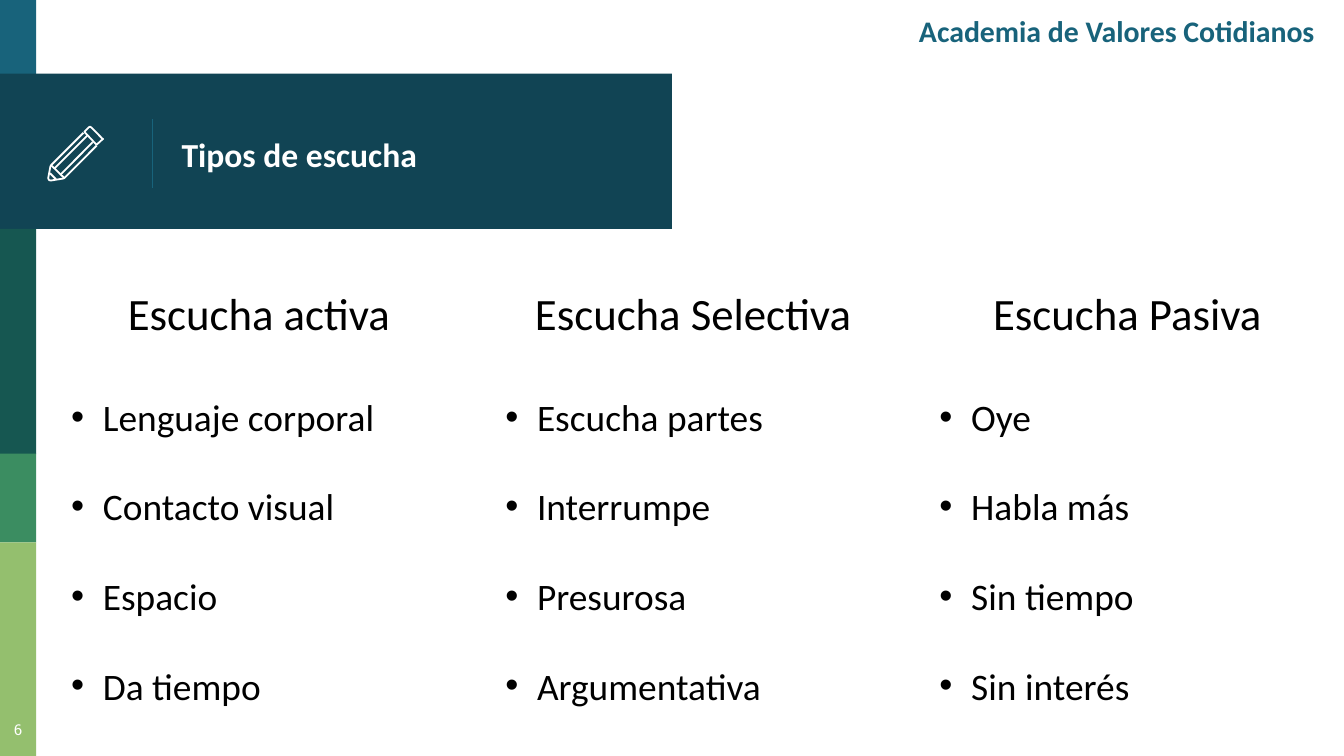
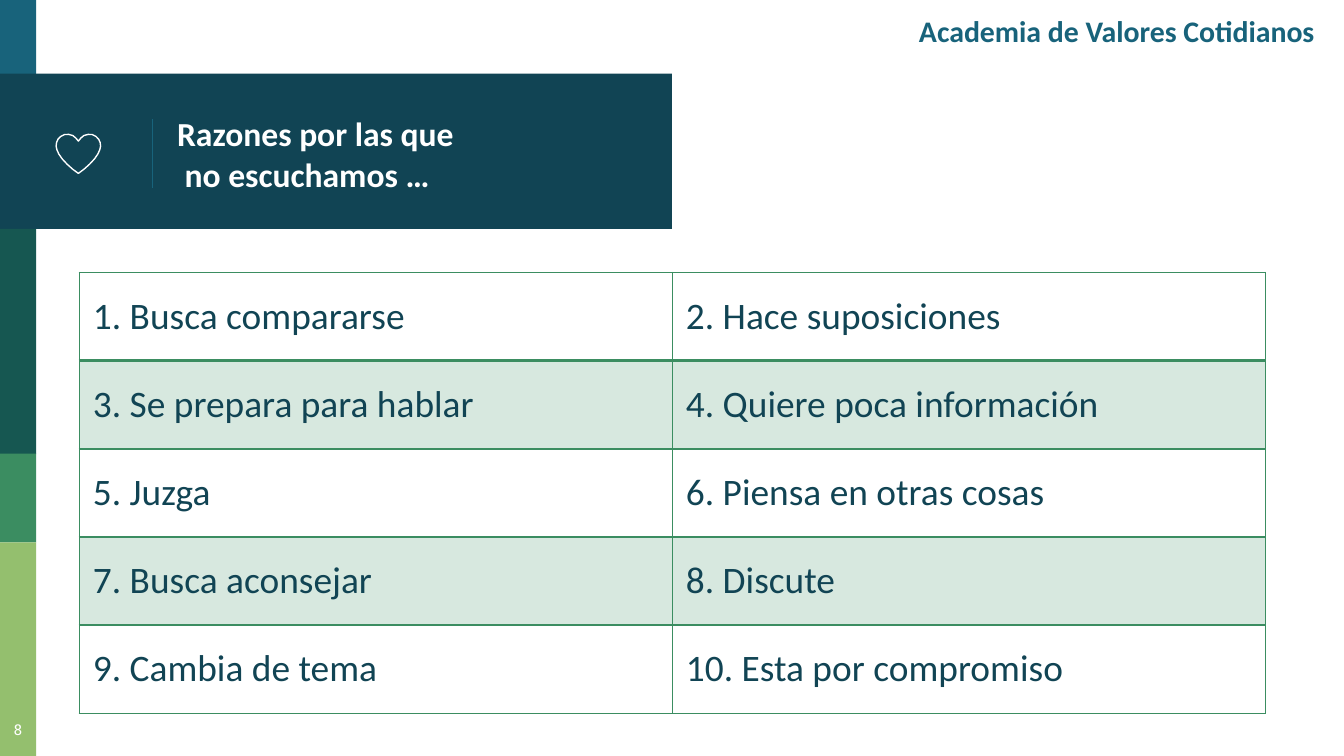
from dataclasses import dataclass

from lxml.etree import SubElement
from pptx import Presentation
from pptx.dml.color import RGBColor
from pptx.enum.shapes import MSO_CONNECTOR, MSO_SHAPE
from pptx.enum.text import MSO_ANCHOR, PP_ALIGN
from pptx.oxml.ns import qn
from pptx.util import Pt

Dot = tuple[float, float]


@dataclass(frozen=True)
class Theme:
    font: str = "Calibri"
    slab: str = "Roboto Slab"
    white: str = "FFFFFF"
    black: str = "000000"
    blue: str = "18637B"
    navy: str = "114454"
    pine: str = "165751"
    green: str = "3B8D61"
    lime: str = "94BF6E"
    head: int = 24
    body: int = 20
    title: int = 18
    brand: int = 16
    page: int = 8


THEME = Theme()
WIDTH, HEIGHT = 720, 405
SIDE = 19.4
INSET = 7.2
BRAND = "Academia de Valores Cotidianos"


@dataclass(frozen=True)
class Box:
    left: float
    top: float
    width: float
    height: float


@dataclass(frozen=True)
class Style:
    size: int
    color: str
    bold: bool = False
    font: str = THEME.font


@dataclass(frozen=True)
class Band:
    box: Box
    color: str


@dataclass(frozen=True)
class Stroke:
    dots: list[Dot]
    closed: bool = False


@dataclass(frozen=True)
class Column:
    head: str
    items: list[str]


BANDS = [
    Band(Box(0, 0, SIDE, 41.8), THEME.blue),
    Band(Box(0, 39.4, 360, 83.2), THEME.navy),
    Band(Box(0, 122.6, SIDE, 120.8), THEME.pine),
    Band(Box(0, 243, SIDE, 47.6), THEME.green),
    Band(Box(0, 290.6, SIDE, 114.4), THEME.lime),
]

PENCIL = [
    Stroke([(54.7, 74.2), (49, 68.4), (48.2, 67.9), (47.4, 68.4), (45.2, 70.7),
            (51.7, 77.6), (54.7, 74.9), (55.2, 74.5)], closed=True),
    Stroke([(44.7, 71.2), (27.4, 88.5), (27, 89.2), (25.8, 95.6), (26.4, 96.6),
            (27.4, 96.7), (33.8, 95.7), (34.5, 95.4), (51.8, 78)]),
    Stroke([(49.7, 76.2), (32.3, 93.7)]),
    Stroke([(46.8, 72.7), (29.4, 90.1)]),
    Stroke([(30, 96), (26.8, 92.8)]),
    Stroke([(27.4, 88.5), (34.5, 95.4)]),
]

# Right half of the heart, as offsets from its axis, from notch to tip
HEART_AXIS = 42
HALF = [(0, 75.6), (1.4, 73.9), (3, 72.6), (5.2, 72), (7.4, 72.1), (9.4, 73.1),
        (10.9, 74.6), (11.7, 76.4), (11.9, 78.3), (11.5, 80.2), (10.4, 82.6),
        (8.6, 85.2), (6, 88), (3, 90.7), (0, 92.9)]
HEART = [Stroke([(HEART_AXIS + x, y) for x, y in HALF]
                + [(HEART_AXIS - x, y) for x, y in HALF[-2:0:-1]], closed=True)]

COLUMNS = [
    Column("Escucha activa",
           ["Lenguaje corporal", "Contacto visual", "Espacio", "Da tiempo"]),
    Column("Escucha Selectiva",
           ["Escucha partes", "Interrumpe", "Presurosa", "Argumentativa"]),
    Column("Escucha Pasiva",
           ["Oye", "Habla más", "Sin tiempo", "Sin interés"]),
]

REASONS = ["Busca compararse", "Hace suposiciones", "Se prepara para hablar",
           "Quiere poca información", "Juzga", "Piensa en otras cosas",
           "Busca aconsejar", "Discute", "Cambia de tema",
           "Esta por compromiso"]


def rgb(color: str) -> RGBColor:
    return RGBColor.from_string(color)


def place(box: Box) -> list[Pt]:
    return [Pt(n) for n in (box.left, box.top, box.width, box.height)]


def add_run(para, text: str, style: Style) -> None:
    run = para.add_run()
    run.text = text
    run.font.name = style.font
    run.font.size = Pt(style.size)
    run.font.bold = style.bold
    run.font.color.rgb = rgb(style.color)


def add_frame(slide, box: Box, anchor=MSO_ANCHOR.TOP, side: float = INSET):
    frame = slide.shapes.add_textbox(*place(box)).text_frame
    frame.word_wrap = True
    frame.vertical_anchor = anchor
    frame.margin_left = frame.margin_right = Pt(side)
    frame.margin_top = frame.margin_bottom = Pt(INSET)
    return frame


def add_label(slide, box: Box, lines: list[str], style: Style,
              align=PP_ALIGN.LEFT, anchor=MSO_ANCHOR.MIDDLE,
              side: float = INSET) -> None:
    """Put one paragraph on the slide, with a break between lines."""
    para = add_frame(slide, box, anchor, side).paragraphs[0]
    para.alignment = align
    for i, line in enumerate(lines):
        if i:
            para.add_line_break()
        add_run(para, line, style)


def add_band(slide, band: Band) -> None:
    shape = slide.shapes.add_shape(MSO_SHAPE.RECTANGLE, *place(band.box))
    shape.shadow.inherit = False
    shape.fill.solid()
    shape.fill.fore_color.rgb = rgb(band.color)
    shape.line.fill.background()


def add_rule(slide, x: float, top: float, end: float) -> None:
    rule = slide.shapes.add_connector(
        MSO_CONNECTOR.STRAIGHT, Pt(x), Pt(top), Pt(x), Pt(end))
    rule.line.color.rgb = rgb(THEME.blue)
    rule.line.width = Pt(0.75)
    SubElement(rule.element.spPr, qn("a:effectLst"))


def add_icon(slide, strokes: list[Stroke], weight: float) -> None:
    for stroke in strokes:
        dots = [(Pt(x), Pt(y)) for x, y in stroke.dots]
        pen = slide.shapes.build_freeform(*dots[0])
        pen.add_line_segments(dots[1:], close=stroke.closed)
        shape = pen.convert_to_shape()
        shape.shadow.inherit = False
        shape.fill.background()
        shape.line.color.rgb = rgb(THEME.white)
        shape.line.width = Pt(weight)


def add_bullet(para, hang: float) -> None:
    props = para._p.get_or_add_pPr()
    props.set("marL", str(Pt(hang)))
    props.set("indent", str(-Pt(hang)))
    tint = SubElement(props, qn("a:buClr"))
    SubElement(tint, qn("a:srgbClr"), val=THEME.black)
    SubElement(props, qn("a:buFont"), typeface="Arial")
    SubElement(props, qn("a:buChar"), char="•")


def add_column(slide, box: Box, column: Column) -> None:
    frame = add_frame(slide, box)
    head = frame.paragraphs[0]
    head.alignment = PP_ALIGN.CENTER
    add_run(head, column.head, Style(THEME.head, THEME.black))
    for i, item in enumerate(column.items):
        para = frame.add_paragraph()
        para.space_before = Pt(24 if i else 29)
        add_bullet(para, 17)
        add_run(para, item, Style(THEME.body, THEME.black))


def add_edge(cell, side: str, weight: float) -> None:
    line = SubElement(cell._tc.get_or_add_tcPr(), qn(f"a:ln{side}"),
                      w=str(Pt(weight)))
    fill = SubElement(line, qn("a:solidFill"))
    SubElement(fill, qn("a:srgbClr"), val=THEME.green)


def fill_cell(cell, shaded: bool) -> None:
    if not shaded:
        cell.fill.background()
        return
    cell.fill.solid()
    cell.fill.fore_color.rgb = rgb(THEME.green)
    tint = cell._tc.tcPr.find(f"{qn('a:solidFill')}/{qn('a:srgbClr')}")
    SubElement(tint, qn("a:alpha"), val="20000")


def add_grid(slide, box: Box, items: list[str], cols: int) -> None:
    rows = len(items) // cols
    table = slide.shapes.add_table(rows, cols, *place(box)).table
    table.first_row = table.horz_banding = False
    for col in table.columns:
        col.width = Pt(box.width / cols)
    for row in table.rows:
        row.height = Pt(box.height / rows)
    for i, item in enumerate(items):
        row, col = divmod(i, cols)
        cell = table.cell(row, col)
        cell.vertical_anchor = MSO_ANCHOR.MIDDLE
        add_run(cell.text_frame.paragraphs[0], f"{i + 1}. {item}",
                Style(THEME.body, THEME.navy))
        weights = {"L": 1, "R": 1, "T": 2 if row == 1 else 1,
                   "B": 2 if row == 0 else 1}
        for side, weight in weights.items():
            add_edge(cell, side, weight)
        fill_cell(cell, row % 2 == 1)


def add_page(deck, page: int, title: list[str], left: float):
    """Add a slide with the bands, title, page number and header."""
    slide = deck.slides.add_slide(deck.slide_layouts[6])
    for band in BANDS:
        add_band(slide, band)
    add_rule(slide, 81.6, 64, 100.8)
    add_label(slide, Box(left, 42, 270, 80.6), title,
              Style(THEME.title, THEME.white, True))
    add_label(slide, Box(0, 381.4, SIDE, 23.6), [str(page)],
              Style(THEME.page, THEME.white, font=THEME.slab),
              PP_ALIGN.CENTER, MSO_ANCHOR.TOP, side=0)
    add_label(slide, Box(445, 0, 266.4, 33.2), [BRAND],
              Style(THEME.brand, THEME.blue, True), PP_ALIGN.RIGHT)
    return slide


def main() -> None:
    deck = Presentation()
    deck.slide_width, deck.slide_height = Pt(WIDTH), Pt(HEIGHT)

    types = add_page(deck, 6, ["Tipos de escucha"], 90.2)
    add_icon(types, PENCIL, 0.96)
    for i, column in enumerate(COLUMNS):
        add_column(types, Box(31 + 232.6 * i, 146, 215.4, 237.6), column)

    reasons = add_page(deck, 8, ["Razones por las que", " no escuchamos …"], 87.8)
    add_icon(reasons, HEART, 0.75)
    add_grid(reasons, Box(42.6, 146, 635.4, 236.2), REASONS, 2)

    deck.save("out.pptx")


if __name__ == "__main__":
    main()
